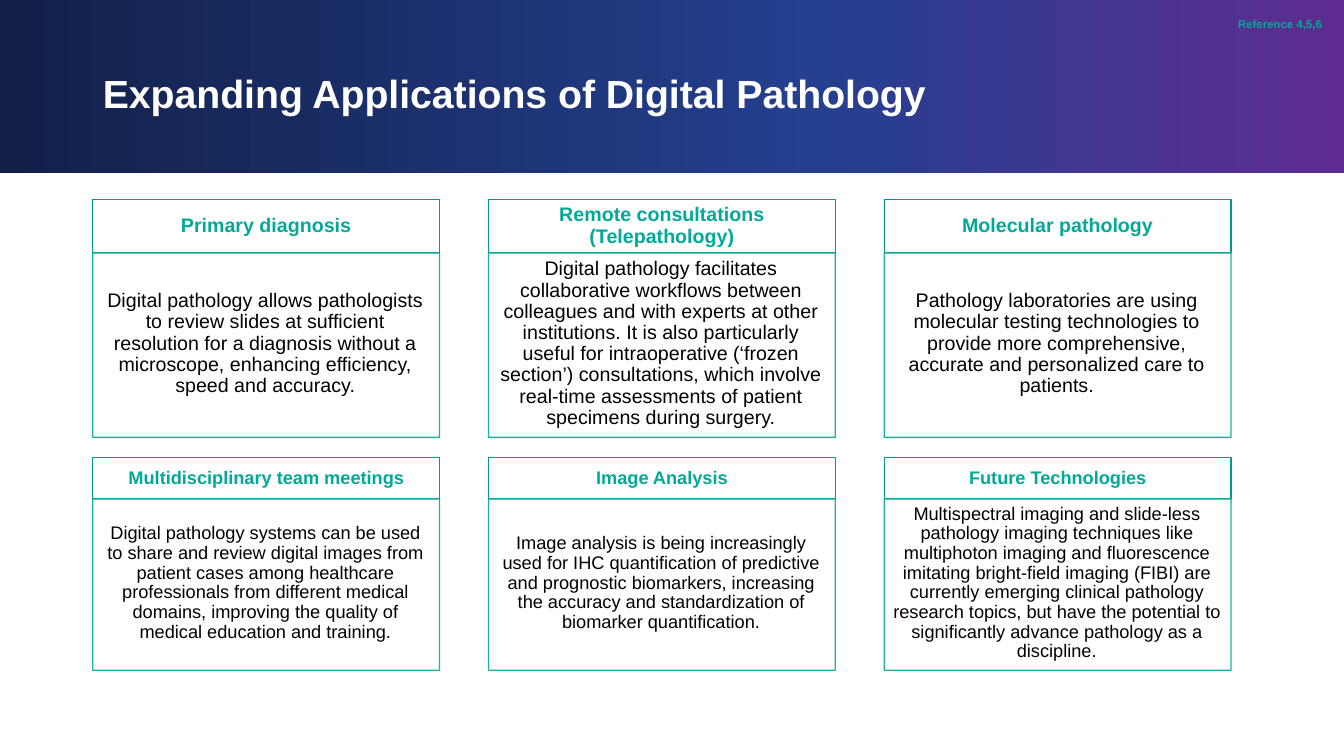
from pptx import Presentation
from pptx.dml.color import RGBColor
from pptx.enum.shapes import MSO_SHAPE
from pptx.enum.text import MSO_ANCHOR, PP_ALIGN
from pptx.util import Inches, Pt
from pptx.oxml import parse_xml
from pptx.oxml.ns import nsdecls
from copy import deepcopy

TITLE = "Expanding Applications of Digital Pathology"
NOTE = "Reference 4,5,6"
ROWS = [
    dict(top=1.98, head=0.53, body=1.83, size=14, cards=[
        ("Primary diagnosis",
         "Digital pathology allows pathologists to review slides at sufficient resolution for a diagnosis without a microscope, enhancing efficiency, speed and accuracy."),
        ("Remote consultations (Telepathology)",
         "Digital pathology facilitates collaborative workflows between colleagues and with experts at other institutions. It is also particularly useful for intraoperative (‘frozen section’) consultations, which involve real-time assessments of patient specimens during surgery."),
        ("Molecular pathology",
         "Pathology laboratories are using molecular testing technologies to provide more comprehensive, accurate and personalized care to patients."),
    ]),
    dict(top=4.54, head=0.41, body=1.7, size=13, cards=[
        ("Multidisciplinary team meetings",
         "Digital pathology systems can be used to share and review digital images from patient cases among healthcare professionals from different medical domains, improving the quality of medical education and training."),
        ("Image Analysis",
         "Image analysis is being increasingly used for IHC quantification of predictive and prognostic biomarkers, increasing the accuracy and standardization of biomarker quantification."),
        ("Future Technologies",
         "Multispectral imaging and slide-less pathology imaging techniques like multiphoton imaging and fluorescence imitating bright-field imaging (FIBI) are currently emerging clinical pathology research topics, but have the potential to significantly advance pathology as a discipline."),
    ]),
]
STOPS = [(0, "122048"), (0.61, "24408F"), (1, "5E2C91")]
WIDE, HIGH = 13.33, 7.5
LEFT, STEP, CARD = 0.92, 3.925, 3.44
TEAL, EDGE, WHITE, BLACK = "00A998", "00998A", "FFFFFF", "000000"


def color(code):
    return RGBColor.from_string(code)


def place(shape, *spot):
    shape.left, shape.top, shape.width, shape.height = map(Inches, spot)


def write(shape, text, size=14, ink=BLACK, bold=False, align=PP_ALIGN.CENTER,
          anchor=MSO_ANCHOR.MIDDLE, pads=(0.1, 0.05, 0.1, 0.05)):
    frame = shape.text_frame
    frame.word_wrap = True
    frame.vertical_anchor = anchor
    (frame.margin_left, frame.margin_top,
     frame.margin_right, frame.margin_bottom) = map(Inches, pads)
    para = frame.paragraphs[0]
    para.alignment = align
    para.line_spacing = 0.9
    run = para.add_run()
    run.text = text
    font = run.font
    font.name, font.size, font.bold = "Arial", Pt(size), bold
    font.color.rgb = color(ink)
    return run


def box(slide, *spot):
    shape = slide.shapes.add_shape(MSO_SHAPE.RECTANGLE, *map(Inches, spot))
    shape.shadow.inherit = False
    return shape


def panel(slide, spot, edge, alpha=None):
    shape = box(slide, *spot)
    shape.fill.solid()
    shape.fill.fore_color.rgb = color(WHITE)
    shape.line.color.rgb = color(edge)
    shape.line.width = Pt(1)
    if alpha:
        for tint in shape._element.spPr.xpath(".//a:srgbClr"):
            tint.append(parse_xml(f'<a:alpha {nsdecls("a")} val="{alpha * 1000}"/>'))
    return shape


def banner(slide):
    band = box(slide, 0, 0, WIDE, 1.72)
    band.line.fill.background()
    band.fill.gradient()
    band.fill.gradient_angle = 0
    first = band._element.spPr.xpath(".//a:gs")[0]
    first.addnext(deepcopy(first))
    for stop, (spot, code) in zip(band.fill.gradient_stops, STOPS):
        stop.position = spot
        stop.color.rgb = color(code)
    title = slide.shapes.title
    title._element.addprevious(band._element)
    place(title, LEFT, 0.31, 11.31, 1.28)
    write(title, TITLE, size=28, ink=WHITE, bold=True, align=PP_ALIGN.LEFT)
    note = slide.shapes.add_textbox(0, 0, 0, 0)
    place(note, 11.21, 0.12, 2, 0.28)
    run = write(note, NOTE, ink=TEAL, bold=True, align=PP_ALIGN.RIGHT,
                anchor=MSO_ANCHOR.TOP)
    run.font._element.set("baseline", "30000")


def main():
    deck = Presentation()
    deck.slide_width, deck.slide_height = Inches(WIDE), Inches(HIGH)
    slide = deck.slides.add_slide(deck.slide_layouts[5])
    banner(slide)
    for row in ROWS:
        top, head, size = row["top"], row["head"], row["size"]
        for col, (name, text) in enumerate(row["cards"]):
            left = LEFT + col * STEP
            cap = panel(slide, (left, top, CARD, head), EDGE)
            write(cap, name, size=size, ink=TEAL, bold=True,
                  pads=(0.1, 0.06, 0.1, 0.06))
            card = panel(slide, (left, top + head, CARD, row["body"]), TEAL, 90)
            write(card, text, size=size, pads=(0.08, 0.08, 0.1, 0.11))
    deck.save("out.pptx")


if __name__ == "__main__":
    main()
